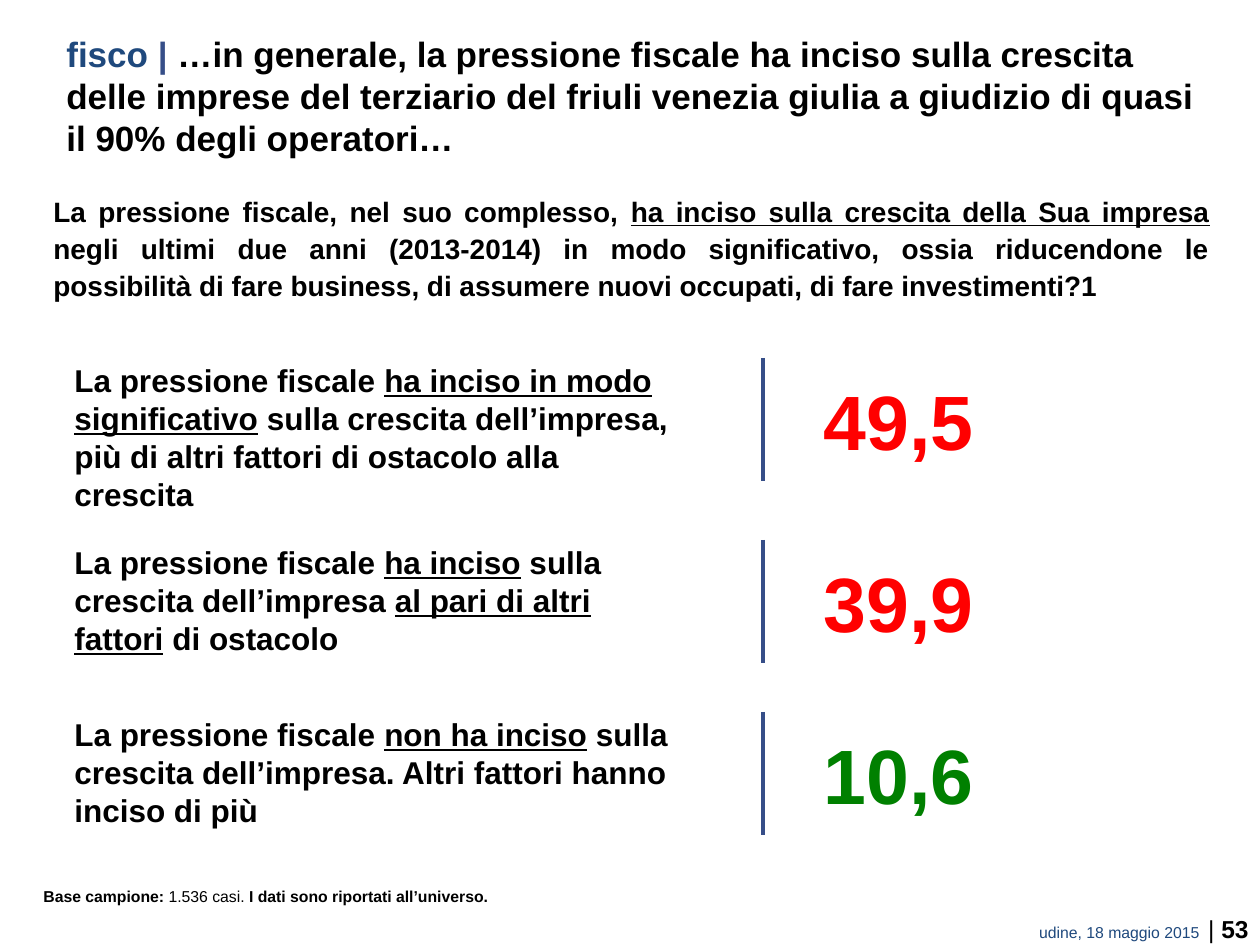
from lxml.etree import SubElement
from pptx import Presentation
from pptx.dml.color import RGBColor
from pptx.enum.shapes import MSO_CONNECTOR
from pptx.enum.text import MSO_ANCHOR, MSO_AUTO_SIZE, PP_ALIGN
from pptx.oxml.ns import qn
from pptx.util import Pt

SCALE = 914400 / 126
BLACK, NAVY, BLUE = "000000", "1F497D", "364E88"
RED, GREEN = "FF0000", "008000"
BOLD = {"bold": True}
UNDER = {"bold": True, "underline": True}

ROWS = [
    (358, "49,5", RED, 165, [
        ("La pressione fiscale ", BOLD),
        ("ha inciso in modo significativo", UNDER),
        (" sulla crescita dell’impresa, più di altri fattori di ostacolo alla crescita", BOLD),
    ]),
    (540, "39,9", RED, 127, [
        ("La pressione fiscale ", BOLD),
        ("ha inciso", UNDER),
        (" sulla crescita dell’impresa ", BOLD),
        ("al pari di altri fattori", UNDER),
        (" di ostacolo", BOLD),
    ]),
    (712, "10,6", GREEN, 127, [
        ("La pressione fiscale ", BOLD),
        ("non ha inciso", UNDER),
        (" sulla crescita dell’impresa. Altri fattori hanno inciso di più", BOLD),
    ]),
]


def px(n):
    return round(n * SCALE)


def paint(target, color):
    target.rgb = RGBColor.from_string(color)


def add_text(slide, at, runs, size, wrap=True, grow=True, **para):
    """Add a one-paragraph box; each run is (text, font values)."""
    box = slide.shapes.add_textbox(*map(px, at))
    frame = box.text_frame
    look = {
        "word_wrap": wrap,
        "vertical_anchor": MSO_ANCHOR.TOP,
        "auto_size": MSO_AUTO_SIZE.SHAPE_TO_FIT_TEXT if grow else MSO_AUTO_SIZE.NONE,
    }
    for key, value in look.items():
        setattr(frame, key, value)
    line = frame.paragraphs[0]
    for key, value in para.items():
        setattr(line, key, value)
    for text, style in runs:
        run = line.add_run()
        run.text = text
        font = {"name": "Arial", "size": Pt(size), "color": BLACK, **style}
        paint(run.font.color, font.pop("color"))
        for key, value in font.items():
            setattr(run.font, key, value)


def add_rule(slide, x, top, tall):
    rule = slide.shapes.add_connector(
        MSO_CONNECTOR.STRAIGHT, px(x), px(top), px(x), px(top + tall))
    paint(rule.line.color, BLUE)
    rule.line.width = Pt(2)
    SubElement(rule._element.spPr, qn("a:effectLst"))


def add_row(slide, top, value, color, tall, runs):
    add_text(slide, (62, top - 3, 630, tall), runs, 18)
    add_rule(slide, 763, top, 123)
    add_text(slide, (811, top + 9, 176, 106), [(value, {"bold": True, "color": color})],
             44, wrap=False, alignment=PP_ALIGN.CENTER)


def main():
    deck = Presentation()
    deck.slide_width, deck.slide_height = px(1260), px(945)
    slide = deck.slides.add_slide(deck.slide_layouts[6])
    full = {"alignment": PP_ALIGN.JUSTIFY, "line_spacing": 1.1}

    add_text(slide, (388, 908, 873, 41), [
        ("udine, 18 maggio 2015  ", {"size": Pt(9), "color": NAVY}),
        ("| ", {}),
        ("53", BOLD),
    ], 14, alignment=PP_ALIGN.RIGHT)
    add_text(slide, (54, 26, 1170, 106), [
        ("fisco ", {"bold": True, "color": NAVY}),
        ("| ", {"bold": True, "color": BLUE}),
        ("…in generale, la pressione fiscale ha inciso sulla crescita delle imprese "
         "del terziario del friuli venezia giulia a giudizio di quasi il 90% degli "
         "operatori…", BOLD),
    ], 20, grow=False)
    add_text(slide, (41, 185, 1181, 122), [
        ("La pressione fiscale, nel suo complesso, ", BOLD),
        ("ha inciso sulla crescita della Sua impresa", UNDER),
        (" negli ultimi due anni (2013-2014) in modo significativo, ossia riducendone "
         "le possibilità di fare business, di assumere nuovi occupati, di fare "
         "investimenti?1", BOLD),
    ], 16, **full)
    for row in ROWS:
        add_row(slide, *row)
    add_text(slide, (31, 879, 1218, 34), [
        ("Base campione: ", BOLD),
        ("1.536 casi. ", {}),
        ("I dati sono riportati all’universo.", BOLD),
    ], 9, **full)
    deck.save("out.pptx")


if __name__ == "__main__":
    main()
